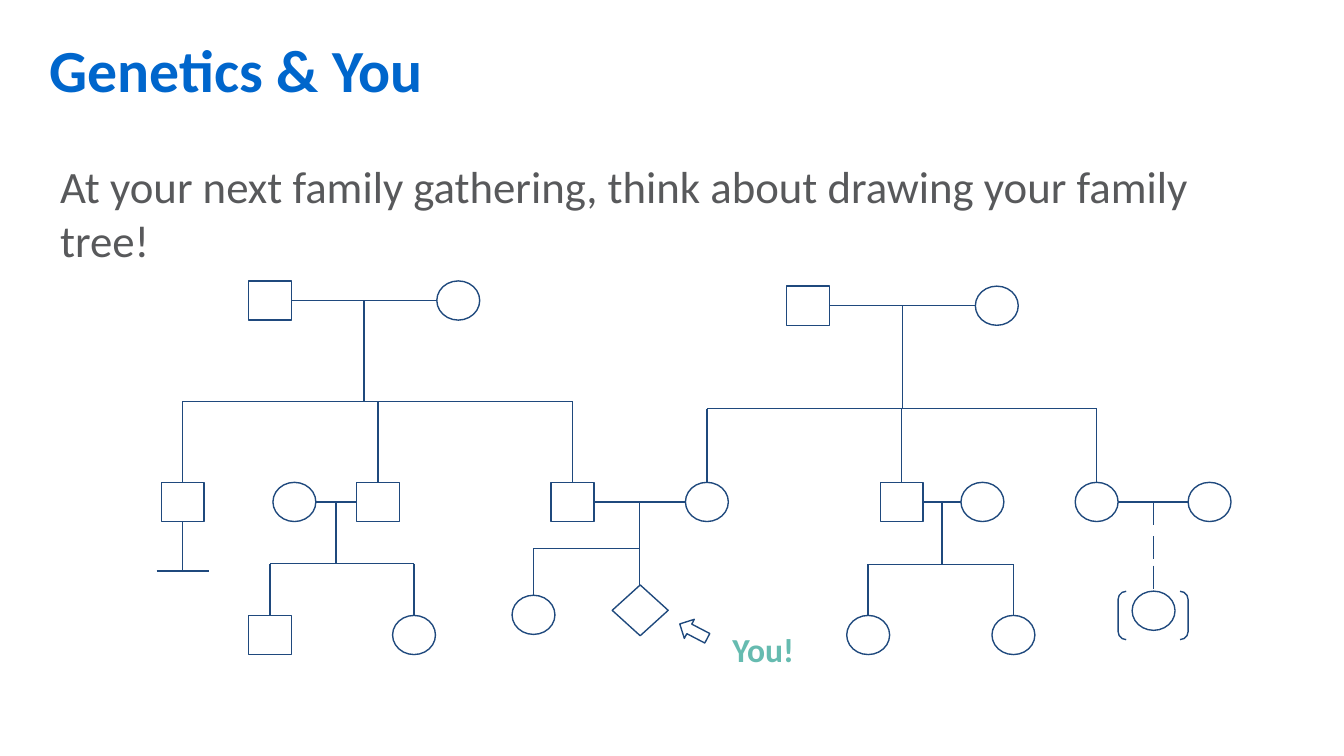
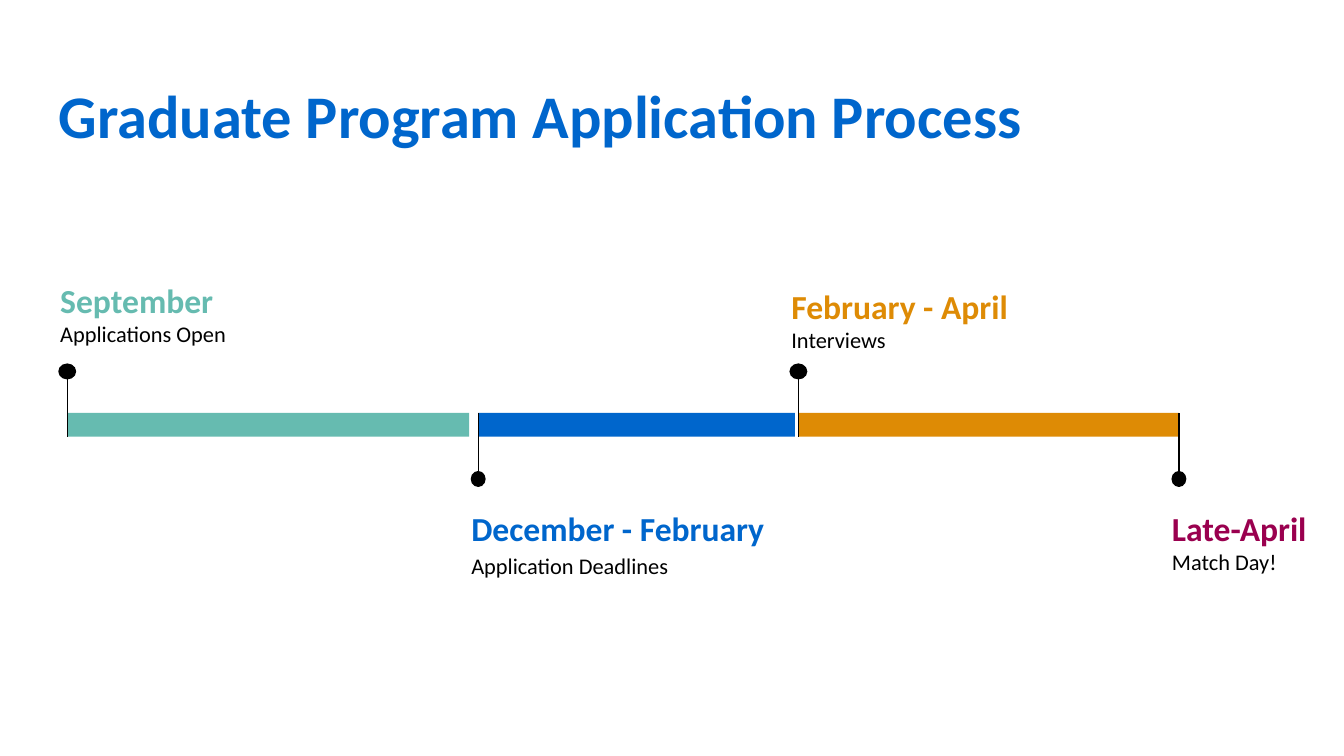
from dataclasses import dataclass, field
from typing import Any, NamedTuple, Optional

from lxml import etree
from pptx import Presentation
from pptx import util as u
from pptx.dml import color
from pptx.enum import shapes, text
from pptx.oxml import ns

Pt = u.Pt
SHAPE = shapes.MSO_SHAPE
TOP, LEFT, BOTTOM, RIGHT = range(4)


@dataclass(frozen=True)
class Theme:
    font: str = "Calibri"
    blue: str = "0066CC"
    teal: str = "66BBB0"
    orange: str = "DE8B05"
    plum: str = "9A004F"
    grey: str = "58595B"
    navy: str = "1F497D"
    black: str = "000000"
    title_size: float = 32
    wide_title_size: float = 32.4
    body_size: float = 24
    label_size: float = 18
    detail_size: float = 12
    line_width: float = 0.75
    inset: float = 7.2


THEME = Theme()


class Area(NamedTuple):
    left: float
    top: float
    width: float
    height: float

    def lengths(self) -> list:
        return [Pt(value) for value in self]


class Line(NamedTuple):
    """One paragraph of text, with its paragraph format values."""
    words: str
    size: float
    colour: str
    bold: bool = False
    layout: dict = {}


# ---- Shared drawing functions ----

def apply(target: Any, values: dict) -> None:
    for name, value in values.items():
        setattr(target, name, value)


def add_text(parts: Any, area: Area, lines: list[Line], frame_format: Optional[dict] = None) -> None:
    box = parts.add_textbox(*area.lengths())
    frame = box.text_frame
    margins = {f"margin_{side}": Pt(THEME.inset) for side in ("left", "top", "right", "bottom")}
    apply(frame, {"word_wrap": True, **margins, **(frame_format or {})})
    for index, line in enumerate(lines):
        para = frame.paragraphs[0] if index == 0 else frame.add_paragraph()
        apply(para, line.layout)
        span = para.add_run()
        span.text = line.words
        apply(span.font, {"name": THEME.font, "size": Pt(line.size), "bold": line.bold})
        span.font.color.rgb = color.RGBColor.from_string(line.colour)


def add_title(page: Any, area: Area, words: str, size: float, frame_format: Optional[dict] = None) -> None:
    add_text(page.shapes, area, [Line(words, size, THEME.blue, True)], frame_format)


def set_line(line: Any, colour: str) -> None:
    line.color.rgb = color.RGBColor.from_string(colour)
    line.width = Pt(THEME.line_width)


def add_outline(parts: Any, kind: Any, area: Area, rotation: float = 0) -> Any:
    shape = parts.add_shape(kind, *area.lengths())
    apply(shape, {"rotation": rotation})
    shape.shadow.inherit = False
    shape.fill.background()
    set_line(shape.line, THEME.navy)
    return shape


def add_solid(parts: Any, kind: Any, area: Area, colour: str) -> None:
    shape = parts.add_shape(kind, *area.lengths())
    shape.shadow.inherit = False
    shape.fill.solid()
    shape.fill.fore_color.rgb = color.RGBColor.from_string(colour)
    shape.line.fill.background()


def add_line(parts: Any, x1: float, y1: float, x2: float, y2: float, colour: str) -> Any:
    line = parts.add_connector(shapes.MSO_CONNECTOR.STRAIGHT, Pt(x1), Pt(y1), Pt(x2), Pt(y2))
    set_line(line.line, colour)
    etree.SubElement(line._element.spPr, ns.qn("a:effectLst"))
    return line


# ---- Family tree ----

@dataclass
class Person:
    kind: Any
    x: float
    y: float
    width: float = 23
    height: float = 21
    shape: Any = field(default=None)

    @property
    def top(self) -> float:
        return self.y - self.height / 2

    @property
    def is_square(self) -> bool:
        return self.kind == SHAPE.RECTANGLE

    def draw(self, parts: Any) -> None:
        area = Area(self.x - self.width / 2, self.top, self.width, self.height)
        self.shape = add_outline(parts, self.kind, area)


class Family(NamedTuple):
    """A couple, left then right, and the bar above their children."""
    couple: tuple[str, str]
    bar: float = 0
    children: tuple[str, ...] = ()
    below: str = ""  # child reached by the couple's own line


ELDERS_LEFT, ELDERS_RIGHT, PARENTS, COUSINS = 161, 163.8, 268.9, 340.2
SQUARE, CIRCLE = SHAPE.RECTANGLE, SHAPE.OVAL


def family_people() -> dict[str, Person]:
    return {
        "grandfather 1": Person(SQUARE, 144.7, ELDERS_LEFT),
        "grandmother 1": Person(CIRCLE, 245.5, ELDERS_LEFT),
        "grandfather 2": Person(SQUARE, 432.8, ELDERS_RIGHT),
        "grandmother 2": Person(CIRCLE, 534, ELDERS_RIGHT),
        "single uncle": Person(SQUARE, 97.9, PARENTS),
        "uncle 1 wife": Person(CIRCLE, 157.7, PARENTS),
        "uncle 1": Person(SQUARE, 202.5, PARENTS),
        "father": Person(SQUARE, 306.7, PARENTS),
        "mother": Person(CIRCLE, 378.7, PARENTS),
        "uncle 2": Person(SQUARE, 483.1, PARENTS),
        "uncle 2 wife": Person(CIRCLE, 526.3, PARENTS),
        "aunt": Person(CIRCLE, 587.5, PARENTS),
        "aunt partner": Person(CIRCLE, 648, PARENTS),
        "cousin 1": Person(SQUARE, 144.7, COUSINS),
        "cousin 2": Person(CIRCLE, 221.8, COUSINS),
        "sister": Person(CIRCLE, 285.8, 329.4),
        "you": Person(SHAPE.DIAMOND, 343, 327, 30, 27.2),
        "cousin 3": Person(CIRCLE, 465.1, COUSINS),
        "cousin 4": Person(CIRCLE, 542.9, COUSINS),
        "adopted": Person(CIRCLE, 618, 327.2),
    }


FAMILIES = [
    Family(("grandfather 1", "grandmother 1"), 215, ("single uncle", "uncle 1", "father")),
    Family(("grandfather 2", "grandmother 2"), 218.9, ("mother", "uncle 2", "aunt")),
    Family(("uncle 1 wife", "uncle 1"), 302, ("cousin 1", "cousin 2")),
    Family(("father", "mother"), 293.8, ("sister",), "you"),
    Family(("uncle 2", "uncle 2 wife"), 302.4, ("cousin 3", "cousin 4")),
    Family(("aunt", "aunt partner")),
]


def draw_family(parts: Any, family: Family, people: dict[str, Person]) -> None:
    left, right = (people[name] for name in family.couple)
    start, end = left.x + left.width / 2, right.x - right.width / 2
    link = add_line(parts, start, left.y, end, right.y, THEME.navy)
    if left.is_square:
        link.begin_connect(left.shape, RIGHT)
    if right.is_square:
        link.end_connect(right.shape, LEFT)
    if not family.children:
        return
    middle = (start + end) / 2
    drop_end = people[family.below].top if family.below else family.bar
    add_line(parts, middle, left.y, middle, drop_end, THEME.navy)
    columns = [people[name].x for name in family.children]
    if family.below:
        columns.append(middle)
    add_line(parts, min(columns), family.bar, max(columns), family.bar, THEME.navy)
    for name in family.children:
        child = people[name]
        rise = add_line(parts, child.x, family.bar, child.x, child.top, THEME.navy)
        if child.is_square:
            rise.end_connect(child.shape, TOP)


def build_family_page(page: Any) -> None:
    parts = page.shapes
    add_title(page, Area(19.4, 10.1, 551.5, 63.4), "Genetics & You", THEME.title_size)
    add_text(parts, Area(25.2, 77.8, 648, 80.6), [
        Line("At your next family gathering, think about drawing your family tree!",
             THEME.body_size, THEME.grey, layout={"space_after": Pt(12)})])

    people = family_people()
    for person in people.values():
        person.draw(parts)
    for family in FAMILIES:
        draw_family(parts, family, people)

    # No children: a stem closed by a short bar
    single = people["single uncle"]
    stem = add_line(parts, single.x, single.y, single.x, 306, THEME.navy)
    stem.begin_connect(single.shape, BOTTOM)
    add_line(parts, single.x - 14, 306, single.x + 14, 306, THEME.navy)

    # Adopted child: dashes and brackets
    adopted = people["adopted"]
    for dash_top in (269.3, 287.3, 303.1):
        add_line(parts, adopted.x, dash_top, adopted.x, dash_top + 12.2, THEME.navy)
    add_outline(parts, SHAPE.DOUBLE_BRACKET, Area(599, 316.8, 37.5, 25.9))

    # Pointer to the viewer
    add_outline(parts, SHAPE.UP_ARROW, Area(365.8, 329.8, 11.5, 16.6), 297.5)
    add_text(parts, Area(372.2, 329.8, 73.4, 36),
             [Line("You!", THEME.label_size, THEME.teal, True, {"alignment": text.PP_ALIGN.CENTER})],
             {"auto_size": text.MSO_AUTO_SIZE.SHAPE_TO_FIT_TEXT})


# ---- Timeline ----

class Milestone(NamedTuple):
    period: str
    detail: str
    colour: str
    pin: float
    above: bool
    label_width: float
    bar_width: float = 0
    period_layout: dict = {}
    detail_layout: dict = {}


BAR_TOP, BAR_HEIGHT, DOT_HEIGHT = 221.2, 12.8, 8.6
LOOSE = {"line_spacing": 1.15}
LAST = {"space_after": Pt(16)}
MILESTONES = [
    Milestone("September", "Applications Open", THEME.teal, 36, True, 247.7, 215.3),
    Milestone("December - February", "Application Deadlines", THEME.blue, 256.2, False,
              195.8, 169.6, LOOSE, {**LOOSE, **LAST}),
    Milestone("February - April", "Interviews", THEME.orange, 427.7, True, 235.4, 204, LOOSE),
    Milestone("Late-April", "Match Day!", THEME.plum, 631.6, False, 96.5, 0, LOOSE, LAST),
]


def draw_milestone(page: Any, stone: Milestone) -> None:
    parts = page.shapes.add_group_shape().shapes
    if stone.bar_width:
        add_solid(parts, SQUARE, Area(stone.pin, BAR_TOP, stone.bar_width, BAR_HEIGHT), stone.colour)
    if stone.above:
        dot_y, line_end, dot_width = 199, BAR_TOP + BAR_HEIGHT, 9.6
        label_top, label_height = 142.6, 51.8
    else:
        dot_y, line_end, dot_width = 256.6, BAR_TOP, 8
        label_top, label_height = 261.7, 90.7
    add_line(parts, stone.pin, dot_y, stone.pin, line_end, THEME.black)
    add_solid(parts, CIRCLE, Area(stone.pin - dot_width / 2, dot_y - DOT_HEIGHT / 2,
                                  dot_width, DOT_HEIGHT), THEME.black)
    add_text(parts, Area(stone.pin - 10.8, label_top, stone.label_width, label_height), [
        Line(stone.period, THEME.label_size, stone.colour, True, stone.period_layout),
        Line(stone.detail, THEME.detail_size, THEME.black, False, stone.detail_layout)])


def build_timeline_page(page: Any) -> None:
    add_title(page, Area(24.5, 29.5, 551.5, 63.4), "Graduate Program Application Process",
              THEME.wide_title_size,
              {"vertical_anchor": text.MSO_ANCHOR.MIDDLE, "margin_top": Pt(3.6), "margin_bottom": Pt(3.6)})
    for stone in MILESTONES:
        draw_milestone(page, stone)


def main() -> None:
    deck = Presentation()
    apply(deck, {"slide_width": Pt(720), "slide_height": Pt(405)})
    for build in (build_family_page, build_timeline_page):
        build(deck.slides.add_slide(deck.slide_layouts[6]))
    deck.save("out.pptx")


if __name__ == "__main__":
    main()
